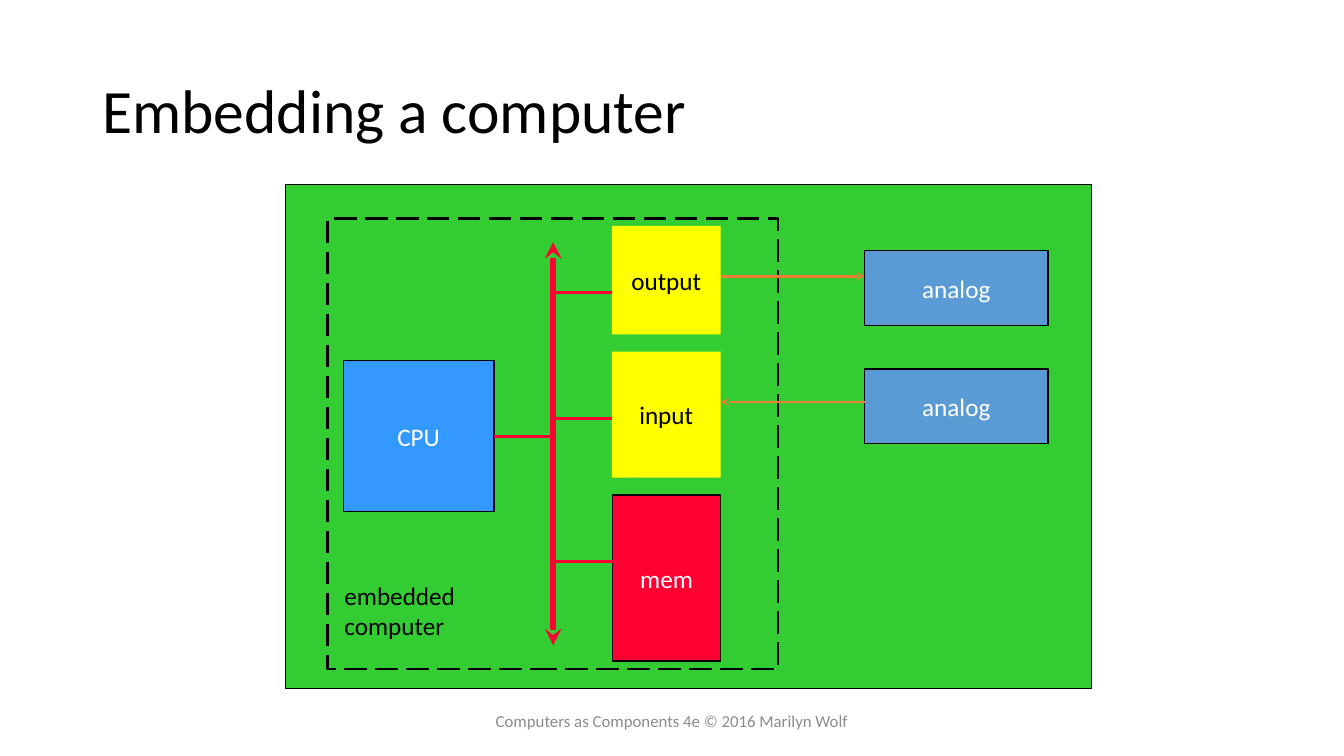
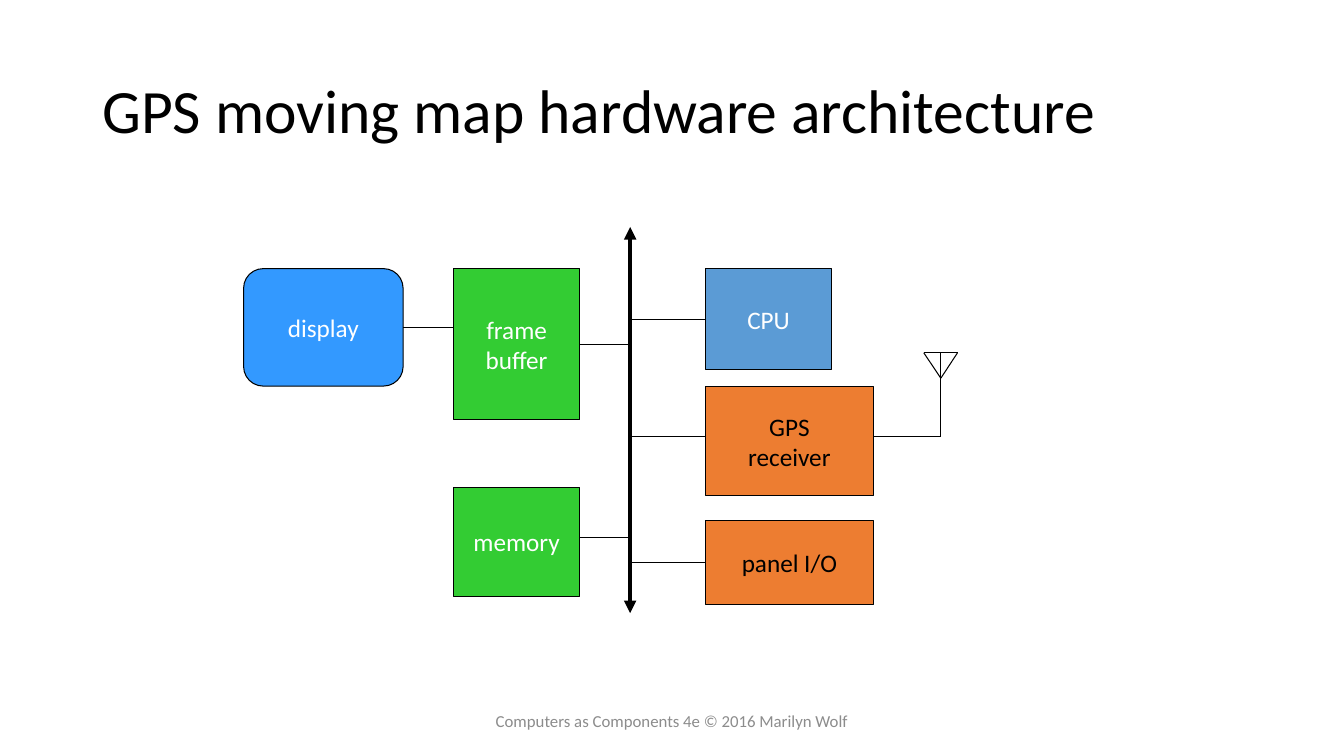
from lxml.etree import SubElement
from pptx import Presentation
from pptx.dml.color import RGBColor
from pptx.enum.dml import MSO_LINE
from pptx.enum.shapes import MSO_CONNECTOR, MSO_SHAPE
from pptx.enum.text import MSO_ANCHOR, MSO_AUTO_SIZE, PP_ALIGN
from pptx.oxml.ns import qn
from pptx.util import Cm, Pt

COLORS = {
    "black": "000000",
    "white": "FFFFFF",
    "grey": "8C8C8C",
    "green": "33CC33",
    "blue": "3399FF",
    "steel": "5B9BD5",
    "red": "FF0033",
    "yellow": "FFFF00",
    "orange": "ED7D31",
}
FONT = "Calibri"
FOOTER = "Computers as Components 4e © 2016 Marilyn Wolf"
LEFT, RIGHT = 1, 3


def color_of(name):
    return RGBColor.from_string(COLORS[name])


def write(shape, text, size=18, color="black", align=PP_ALIGN.LEFT,
          anchor=MSO_ANCHOR.MIDDLE, wrap=True, spacing=None):
    frame = shape.text_frame
    frame.word_wrap = wrap
    frame.vertical_anchor = anchor
    frame.text = text
    for paragraph in frame.paragraphs:
        paragraph.alignment = align
        paragraph.line_spacing = spacing
        font = paragraph.runs[0].font
        font.name = FONT
        font.size = Pt(size)
        font.color.rgb = color_of(color)


class Deck:
    """Holds the shared style and the slide being drawn."""

    def __init__(self):
        self.presentation = Presentation()
        self.presentation.slide_width = Cm(33.87)
        self.presentation.slide_height = Cm(19.05)
        self.slide = None

    def new_slide(self, title):
        layout = self.presentation.slide_layouts[6]
        self.slide = self.presentation.slides.add_slide(layout)
        self.text(title, 2.33, 1.01, 29.21, 3.68, size=44, spacing=0.9)
        self.text(FOOTER, 11.22, 17.65, 11.43, 1.02, size=12, color="grey",
                  align=PP_ALIGN.CENTER)

    def text(self, text, left, top, width, height, **style):
        shape = self.slide.shapes.add_textbox(Cm(left), Cm(top), Cm(width), Cm(height))
        write(shape, text, **style)
        return shape

    def box(self, text, left, top, width, height, fill=None, color="white",
            line=0.75, kind=MSO_SHAPE.RECTANGLE):
        shape = self.slide.shapes.add_shape(kind, Cm(left), Cm(top), Cm(width), Cm(height))
        shape.shadow.inherit = False
        if fill:
            shape.fill.solid()
            shape.fill.fore_color.rgb = color_of(fill)
        else:
            shape.fill.background()
        if line:
            shape.line.color.rgb = color_of("black")
            shape.line.width = Pt(line)
        else:
            shape.line.fill.background()
        if text:
            write(shape, text, color=color, align=PP_ALIGN.CENTER, wrap=False)
        return shape

    def line(self, start, end, color="black", width=0.75, head=None, tail=None):
        connector = self.slide.shapes.add_connector(MSO_CONNECTOR.STRAIGHT, *start, *end)
        connector.line.color.rgb = color_of(color)
        connector.line.width = Pt(width)
        properties = connector._element.spPr
        outline = properties.find(qn("a:ln"))
        for tag, arrow in (("a:headEnd", head), ("a:tailEnd", tail)):
            if arrow:
                SubElement(outline, qn(tag), type=arrow)
        SubElement(properties, qn("a:effectLst"))
        return connector

    def bus(self, x, top, bottom, arrow, **style):
        self.line((Cm(x), Cm(top)), (Cm(x), Cm(bottom)), head=arrow, tail=arrow, **style)

    def tap(self, box, side, x, y=None, **style):
        edge = box.left if side == LEFT else box.left + box.width
        level = box.top + box.height // 2 if y is None else Cm(y)
        connector = self.line((edge, level), (Cm(x), level), **style)
        if y is None:
            connector.begin_connect(box, side)

    def antenna(self, left, center, right, top, tip, bottom):
        strokes = [
            ((center, top), (center, bottom)),
            ((left, top), (right, top)),
            ((left, top), (center, tip)),
            ((center, tip), (right, top)),
        ]
        lines = [self.line(*[(Cm(x), Cm(y)) for x, y in stroke]) for stroke in strokes]
        self.slide.shapes.add_group_shape(lines)


def embedding_slide(deck):
    deck.new_slide("Embedding a computer")
    deck.box("", 7.2, 4.66, 20.32, 12.7, "green")
    cpu = deck.box("CPU", 8.65, 9.09, 3.8, 3.8, "blue", line=1)
    memory = deck.box("mem", 15.44, 12.47, 2.72, 4.19, "red", line=1)
    input_port = deck.box("input", 15.42, 8.86, 2.74, 3.18, "yellow", "black", line=None)
    output_port = deck.box("output", 15.42, 5.69, 2.74, 2.74, "yellow", "black", line=None)

    bus_x, port_edge = 13.94, 18.16
    deck.bus(bus_x, 6.1, 16.26, "stealth", color="red", width=4)
    deck.tap(cpu, RIGHT, bus_x, color="red", width=2)
    for box, y in ((output_port, 7.37), (input_port, 10.54), (memory, 14.15)):
        deck.tap(box, LEFT, bus_x, y, color="red", width=2)

    border = deck.box("", 8.26, 5.51, 11.35, 11.35, line=2)
    border.line.dash_style = MSO_LINE.LONG_DASH
    for top, y, arrow in ((6.32, 6.96, "head"), (9.3, 10.13, "tail")):
        analog = deck.box("analog", 21.79, top, 4.62, 1.88, "steel", line=1)
        deck.tap(analog, LEFT, port_edge, y, color="orange", width=2, **{arrow: "stealth"})
    label = deck.text("embedded\ncomputer", 8.43, 14.5, 3.35, 1.8,
                      anchor=MSO_ANCHOR.TOP, wrap=False)
    label.text_frame.auto_size = MSO_AUTO_SIZE.SHAPE_TO_FIT_TEXT


def hardware_slide(deck):
    deck.new_slide("GPS moving map hardware architecture")
    bus_x, storage_x, device_x, antenna_x = 15.88, 11.43, 17.78, 23.71
    wire_y = 11.01
    receiver = deck.box("GPS\nreceiver", device_x, 9.74, 4.23, 2.75, "orange", "black")
    deck.antenna(23.28, antenna_x, 24.13, 8.89, 9.53, wire_y)
    deck.bus(bus_x, 5.72, 15.45, "triangle", width=3)
    cpu = deck.box("CPU", device_x, 6.77, 3.18, 2.54, "steel")
    panel = deck.box("panel I/O", device_x, 13.12, 4.23, 2.12, "orange", "black")
    display = deck.box("display", 6.14, 6.77, 4.02, 2.96, "blue",
                       kind=MSO_SHAPE.ROUNDED_RECTANGLE)
    frame_buffer = deck.box("frame\nbuffer", storage_x, 6.77, 3.18, 3.81, "green")
    memory = deck.box("memory", storage_x, 12.28, 3.18, 2.75, "green")

    deck.tap(cpu, LEFT, bus_x)
    deck.tap(receiver, LEFT, bus_x, wire_y)
    deck.tap(receiver, RIGHT, antenna_x, wire_y)
    deck.tap(panel, LEFT, bus_x)
    deck.tap(display, RIGHT, storage_x)
    deck.tap(frame_buffer, RIGHT, bus_x)
    deck.tap(memory, RIGHT, bus_x, 13.55)


def main():
    deck = Deck()
    embedding_slide(deck)
    hardware_slide(deck)
    deck.presentation.save("out.pptx")


if __name__ == "__main__":
    main()
